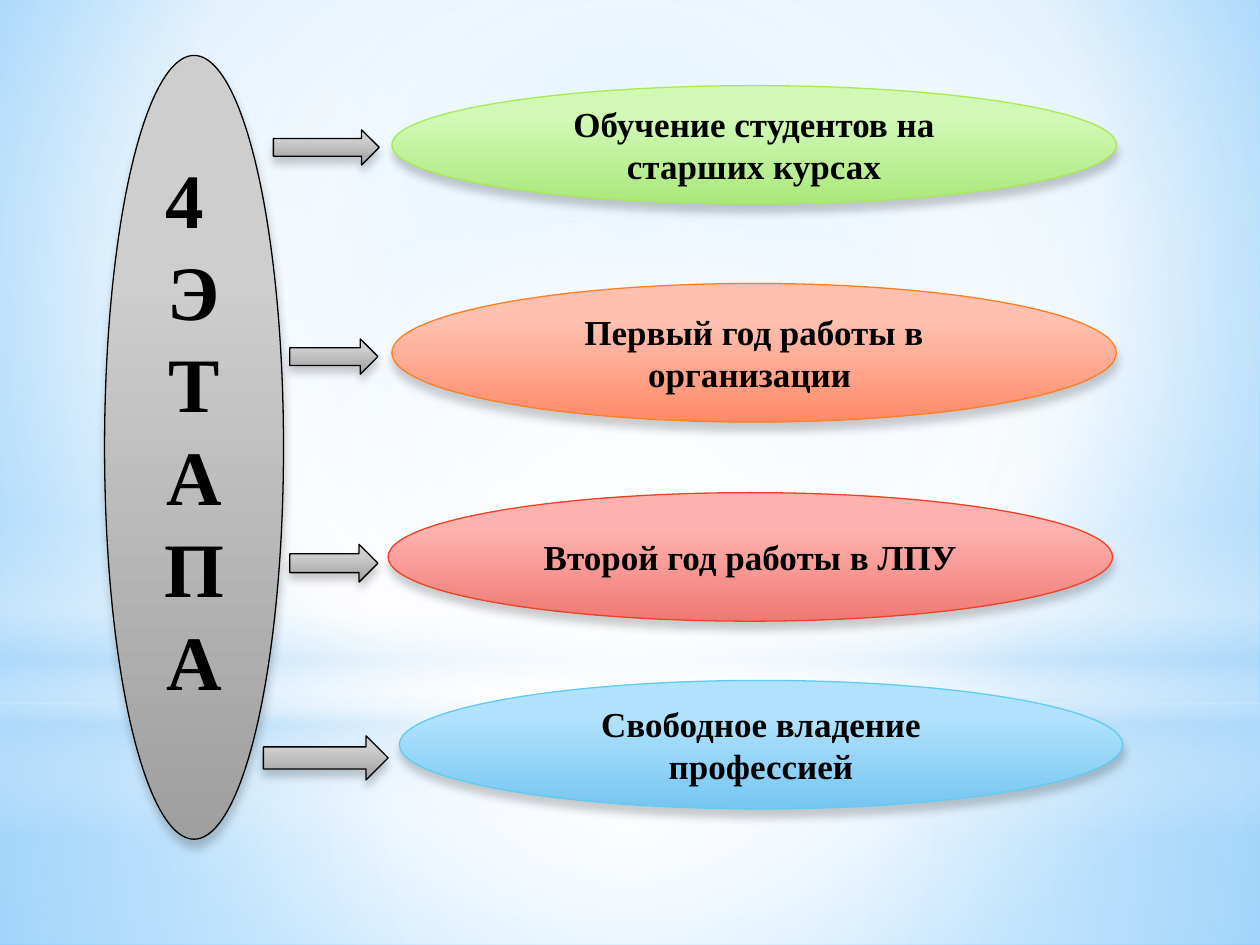
from dataclasses import dataclass
from typing import NamedTuple

from lxml.etree import SubElement
from pptx import Presentation
from pptx.dml.color import RGBColor
from pptx.enum.shapes import MSO_SHAPE as Preset
from pptx.enum.text import MSO_ANCHOR as Anchor, PP_ALIGN as Align
from pptx.oxml.ns import qn
from pptx.util import Inches, Pt

COLUMNS, ROWS = 100, 75
CELL = Inches(0.1)


class Stop(NamedTuple):
    place: int
    color: str
    opacity: int = 100


class Box(NamedTuple):
    """Left, top, width and height in grid columns and rows."""
    left: float
    top: float
    width: float
    height: float


@dataclass(frozen=True)
class Gradient:
    """Linear at an angle, or circular towards a focus (left, top, right, bottom)."""
    stops: tuple[Stop, ...]
    angle: int = 90
    focus: tuple[int, ...] = ()


@dataclass(frozen=True)
class Tone:
    light: str
    dark: str
    line: str

    def gradient(self) -> Gradient:
        return Gradient((Stop(28, self.light), Stop(100, self.dark)))


@dataclass(frozen=True)
class Stage:
    text: str
    tone: Tone
    oval: Box
    arrow: Box


@dataclass(frozen=True)
class Theme:
    font: str = "Times New Roman"
    ink: str = "000000"
    white: str = "FFFFFF"
    haze: str = "B4DCFA"
    heading_size: int = 44
    stage_size: int = 20
    line_width: float = 0.75
    gray: Tone = Tone("CECECE", "9F9F9F", "000000")
    green: Tone = Tone("D1F8B5", "AAE87B", "A7EA52")
    orange: Tone = Tone("FFC0AF", "FF8968", "FF8021")
    red: Tone = Tone("FDB2AF", "F07873", "F14124")
    blue: Tone = Tone("B1E2FD", "76C6F1", "5ECCF3")


THEME = Theme()
CENTER = (50, 50, 50, 50)

SKY = Gradient((Stop(0, "9ED5FF"), Stop(60, THEME.white), Stop(100, "5BB9FF")),
               focus=(20, 10, 20, 60))


def glow(*opacities: int, middle: int) -> Gradient:
    colors = (THEME.white, THEME.white, THEME.haze)
    return Gradient(tuple(map(Stop, (0, middle, 100), colors, opacities)), focus=CENTER)


HORIZON = Gradient((
    Stop(0, THEME.white, 0), Stop(29, THEME.white, 30), Stop(45, THEME.haze, 40),
    Stop(55, THEME.white, 26), Stop(65, THEME.haze, 60), Stop(100, THEME.white, 0)))
HALO = Gradient((Stop(0, THEME.white), Stop(56, THEME.white, 0)), focus=CENTER)

BACKDROP = (
    (Preset.RECTANGLE, Box(0, 55.8, COLUMNS, 19.2), glow(91, 76, 79, middle=37)),
    (Preset.RECTANGLE, Box(0, 0, COLUMNS, 55.8), glow(89, 62, 79, middle=48)),
    (Preset.RECTANGLE, Box(0, 41.2, COLUMNS, 25), HORIZON),
    (Preset.OVAL, Box(0, 17.5, COLUMNS, 55.8), HALO),
)

HEADING = ("4 ", *"ЭТАПА")
HEADING_BOX = Box(8.3, 4.4, 14.2, 62.2)
HEADING_BOTTOM_INSET = 0.35

STAGES = (
    Stage("Обучение студентов на старших курсах", THEME.green,
          Box(31.1, 6.8, 57.5, 9.4), Box(21.7, 10.3, 8.4, 2.8)),
    Stage("Первый год работы в организации ", THEME.orange,
          Box(31.1, 22.5, 57.5, 11), Box(23, 26.9, 7, 2.8)),
    Stage("Второй год работы в ЛПУ", THEME.red,
          Box(30.8, 39.1, 57.5, 10.2), Box(23, 43.2, 7, 3)),
    Stage("Свободное владение профессией", THEME.blue,
          Box(31.7, 54, 57.4, 10.2), Box(20.9, 58.4, 9.9, 3.5)),
)


def add_color(parent, color: str, opacity: int) -> None:
    node = SubElement(parent, qn("a:srgbClr"), val=color)
    if opacity < 100:
        SubElement(node, qn("a:alpha"), val=str(opacity * 1000))


def set_gradient(fill, properties, gradient: Gradient) -> None:
    """Put a gradient where the solid fill of the properties element stands."""
    fill.solid()
    solid = properties.find(qn("a:solidFill"))
    node = properties.makeelement(qn("a:gradFill"), {"rotWithShape": "1"})
    stop_list = SubElement(node, qn("a:gsLst"))
    for stop in gradient.stops:
        item = SubElement(stop_list, qn("a:gs"), pos=str(stop.place * 1000))
        add_color(item, stop.color, stop.opacity)
    if gradient.focus:
        path = SubElement(node, qn("a:path"), path="circle")
        sides = {side: str(share * 1000) for side, share in zip("ltrb", gradient.focus)}
        SubElement(path, qn("a:fillToRect"), sides)
    else:
        SubElement(node, qn("a:lin"), ang=str(gradient.angle * 60000), scaled="0")
    properties.replace(solid, node)


def add_figure(page, preset, box: Box, gradient: Gradient):
    shape = page.shapes.add_shape(preset, *(round(length * CELL) for length in box))
    shape.shadow.inherit = False
    shape.line.fill.background()
    set_gradient(shape.fill, shape._element.spPr, gradient)
    return shape


def add_toned_figure(page, preset, box: Box, tone: Tone):
    """Add a figure with an outline and a soft shadow below it."""
    shape = add_figure(page, preset, box, tone.gradient())
    shape.line.color.rgb = RGBColor.from_string(tone.line)
    shape.line.width = Pt(THEME.line_width)
    effects = shape._element.spPr.find(qn("a:effectLst"))
    shadow = SubElement(effects, qn("a:outerShdw"), blurRad=str(Pt(5)), dist=str(Pt(4)),
                        dir=str(90 * 60000), rotWithShape="0")
    add_color(shadow, THEME.ink, 20)
    return shape


def write(shape, lines: tuple[str, ...], size: int) -> None:
    frame = shape.text_frame
    frame.word_wrap = True
    frame.vertical_anchor = Anchor.MIDDLE
    frame.text = "\n".join(lines)
    looks = {"name": THEME.font, "size": Pt(size), "bold": True}
    for para in frame.paragraphs:
        para.alignment = Align.CENTER
        for span in para.runs:
            for name, value in looks.items():
                setattr(span.font, name, value)
            span.font.color.rgb = RGBColor.from_string(THEME.ink)


def main() -> None:
    deck = Presentation()
    deck.slide_width, deck.slide_height = COLUMNS * CELL, ROWS * CELL
    page = deck.slides.add_slide(deck.slide_layouts.get_by_name("Blank"))
    fill = page.background.fill
    fill.solid()
    set_gradient(fill, page._element.find(".//" + qn("p:bgPr")), SKY)
    for preset, box, gradient in BACKDROP:
        add_figure(page, preset, box, gradient)

    heading = add_toned_figure(page, Preset.OVAL, HEADING_BOX, THEME.gray)
    write(heading, HEADING, THEME.heading_size)
    heading.text_frame.margin_bottom = Inches(HEADING_BOTTOM_INSET)

    for stage in STAGES:
        oval = add_toned_figure(page, Preset.OVAL, stage.oval, stage.tone)
        write(oval, (stage.text,), THEME.stage_size)
    for stage in STAGES:
        add_toned_figure(page, Preset.RIGHT_ARROW, stage.arrow, THEME.gray)
    deck.save("out.pptx")


if __name__ == "__main__":
    main()
